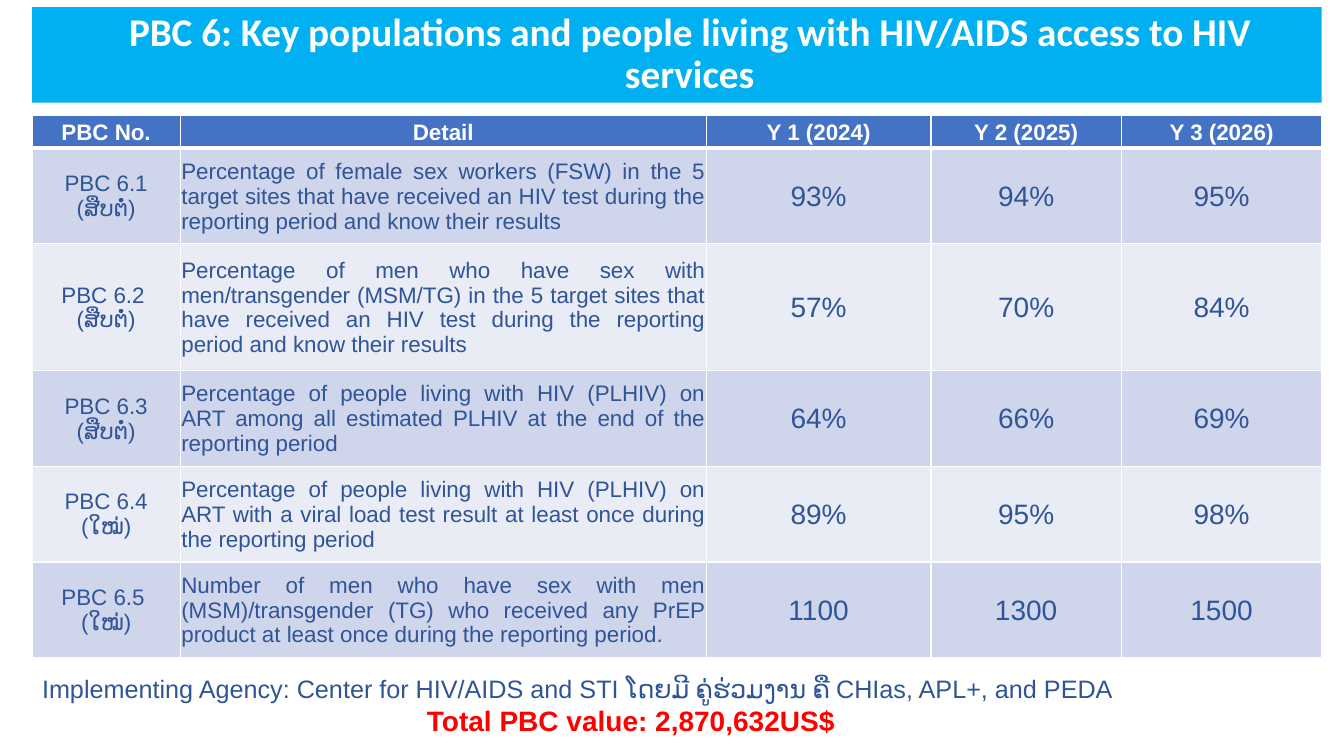
from lxml.etree import SubElement
from pptx import Presentation
from pptx.dml.color import RGBColor
from pptx.enum.shapes import MSO_SHAPE
from pptx.enum.text import MSO_ANCHOR, MSO_AUTO_SIZE, PP_ALIGN
from pptx.oxml.ns import qn
from pptx.util import Cm, Pt

COLORS = {
    "white": "FFFFFF",
    "banner": "00B0F0",
    "header": "4472C4",
    "odd": "CFD5EA",
    "even": "E9EBF5",
    "text": "2F5597",
    "total": "FF0000",
}
LEFT = 0.81
WIDTH = 32.5
COLUMN_WIDTHS = [3.73, 13.26, 5.66, 4.8, 5.05]
ROW_HEIGHTS = [0.81, 2.41, 3.2, 2.41, 2.41, 2.41]
HEADINGS = ["PBC No.", "Detail", "Y 1 (2024)", "Y 2 (2025)", "Y 3 (2026)"]
INDICATORS = [
    ["PBC 6.1\n(ສືບຕໍ່)",
     "Percentage of female sex workers (FSW) in the 5 target sites that have "
     "received an HIV test during the reporting period and know their results",
     "93%", "94%", "95%"],
    ["PBC 6.2 \n(ສືບຕໍ່)",
     "Percentage of men who have sex with men/transgender (MSM/TG) in the 5 "
     "target sites that have received an HIV test during the reporting period "
     "and know their results",
     "57%", "70%", "84%"],
    ["PBC 6.3\n(ສືບຕໍ່)",
     "Percentage of people living with HIV (PLHIV) on ART among all estimated "
     "PLHIV at the end of the reporting period",
     "64%", "66%", "69%"],
    ["PBC 6.4\n(ໃໝ່)",
     "Percentage of people living with HIV (PLHIV) on ART with a viral load "
     "test result at least once during the reporting period",
     "89%", "95%", "98%"],
    ["PBC 6.5 \n(ໃໝ່)",
     "Number of men who have sex with men (MSM)/transgender (TG) who received "
     "any PrEP product at least once during the reporting period.",
     "1100", "1300", "1500"],
]


class SlideBuilder:
    def __init__(self, page, font="Arial"):
        self.page = page
        self.font = font

    def color(self, name):
        return RGBColor.from_string(COLORS[name])

    def paragraph(self, para, text, size, color="text", bold=False,
                  align=PP_ALIGN.LEFT, font=None):
        para.text = text
        para.alignment = align
        para.font.name = font or self.font
        para.font.size = Pt(size)
        para.font.bold = bold
        para.font.color.rgb = self.color(color)

    def banner(self, text, top, height):
        box = self.page.shapes.add_shape(
            MSO_SHAPE.RECTANGLE, Cm(LEFT), Cm(top), Cm(WIDTH), Cm(height))
        box.shadow.inherit = False
        box.fill.solid()
        box.fill.fore_color.rgb = self.color("banner")
        box.line.fill.background()
        box.text_frame.word_wrap = True
        box.text_frame.vertical_anchor = MSO_ANCHOR.MIDDLE
        para = box.text_frame.paragraphs[0]
        self.paragraph(para, text, 28, "white", True, PP_ALIGN.CENTER, "Calibri")
        para.line_spacing = 0.9
        properties = para._p.get_or_add_pPr()
        properties.set("marL", str(Cm(0.64)))
        properties.set("indent", "0")

    def borders(self, cell, bottom):
        properties = cell._tc.get_or_add_tcPr()
        for side, width in (("L", 1), ("R", 1), ("T", 1), ("B", bottom)):
            line = SubElement(properties, qn(f"a:ln{side}"), w=str(Pt(width)))
            fill = SubElement(line, qn("a:solidFill"))
            SubElement(fill, qn("a:srgbClr"), val=COLORS["white"])

    def cell(self, cell, text, fill, bottom=1, **style):
        self.borders(cell, bottom)
        cell.fill.solid()
        cell.fill.fore_color.rgb = self.color(fill)
        cell.vertical_anchor = MSO_ANCHOR.MIDDLE
        cell.margin_left = cell.margin_right = cell.margin_top = Cm(0.03)
        cell.margin_bottom = 0
        self.paragraph(cell.text_frame.paragraphs[0], text, **style)

    def table(self, top):
        table = self.page.shapes.add_table(
            len(ROW_HEIGHTS), len(COLUMN_WIDTHS), Cm(LEFT), Cm(top),
            Cm(WIDTH), Cm(sum(ROW_HEIGHTS))).table
        for column, width in zip(table.columns, COLUMN_WIDTHS):
            column.width = Cm(width)
        for row, height in zip(table.rows, ROW_HEIGHTS):
            row.height = Cm(height)
        for column, heading in enumerate(HEADINGS):
            self.cell(table.cell(0, column), heading, "header", bottom=3,
                      size=16, color="white", bold=True, align=PP_ALIGN.CENTER)
        for row, indicator in enumerate(INDICATORS, 1):
            for column, text in enumerate(indicator):
                self.cell(table.cell(row, column), text,
                          "odd" if row % 2 else "even",
                          size=16 if column < 2 else 20,
                          align=PP_ALIGN.JUSTIFY if column == 1 else PP_ALIGN.CENTER)

    def footer(self, agency, total, top, width, height):
        box = self.page.shapes.add_textbox(Cm(LEFT), Cm(top), Cm(width), Cm(height))
        frame = box.text_frame
        frame.word_wrap = True
        frame.auto_size = MSO_AUTO_SIZE.SHAPE_TO_FIT_TEXT
        self.paragraph(frame.paragraphs[0], agency, 18)
        self.paragraph(frame.add_paragraph(), total, 20, "total", True, PP_ALIGN.CENTER)


def main():
    deck = Presentation()
    deck.slide_width = Cm(33.87)
    deck.slide_height = Cm(19.05)
    builder = SlideBuilder(deck.slides.add_slide(deck.slide_layouts[6]))
    builder.table(top=2.92)
    builder.banner(
        "PBC 6: Key populations and people living with HIV/AIDS access to HIV services",
        top=0.18, height=2.41)
    builder.footer(
        "Implementing Agency: Center for HIV/AIDS and STI ໂດຍມີ ຄູ່ຮ່ວມງານ ຄື "
        "CHIas, APL+, and PEDA",
        "Total PBC value: 2,870,632US$", top=16.84, width=30.18, height=1.88)
    deck.save("out.pptx")


if __name__ == "__main__":
    main()
